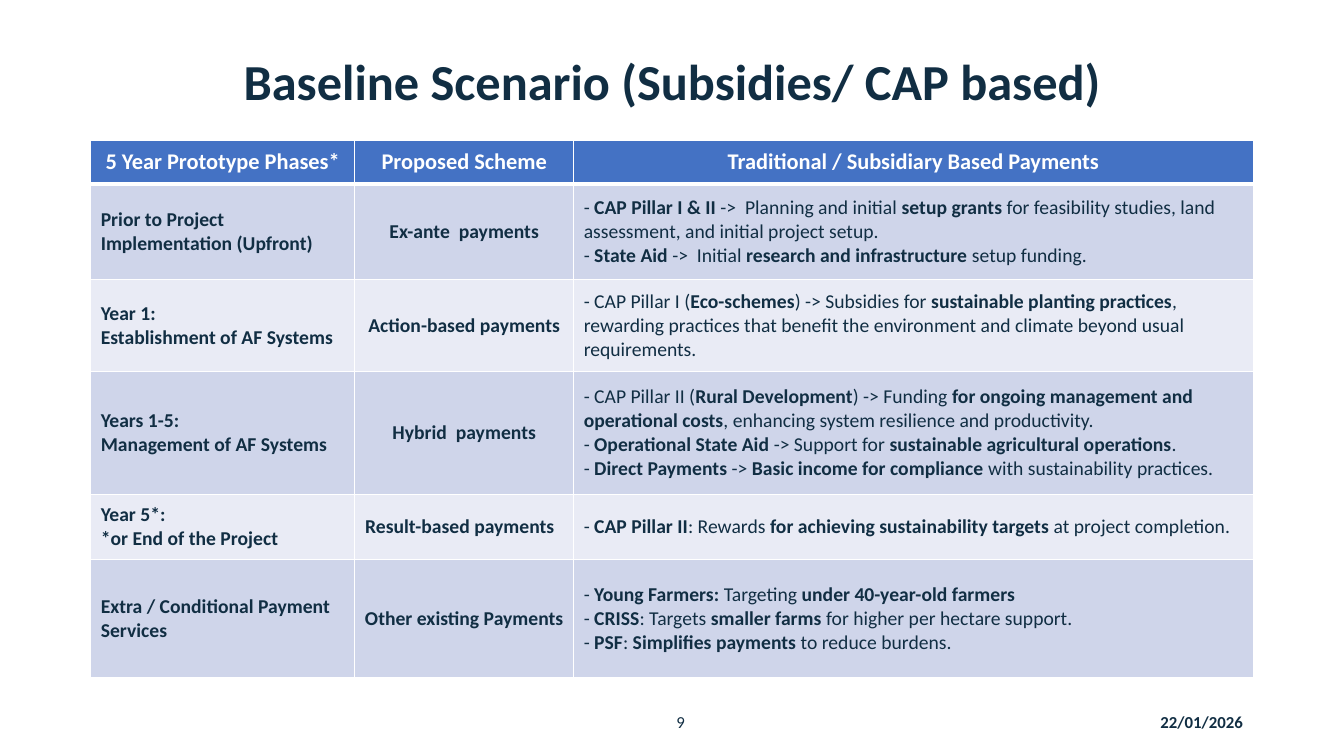
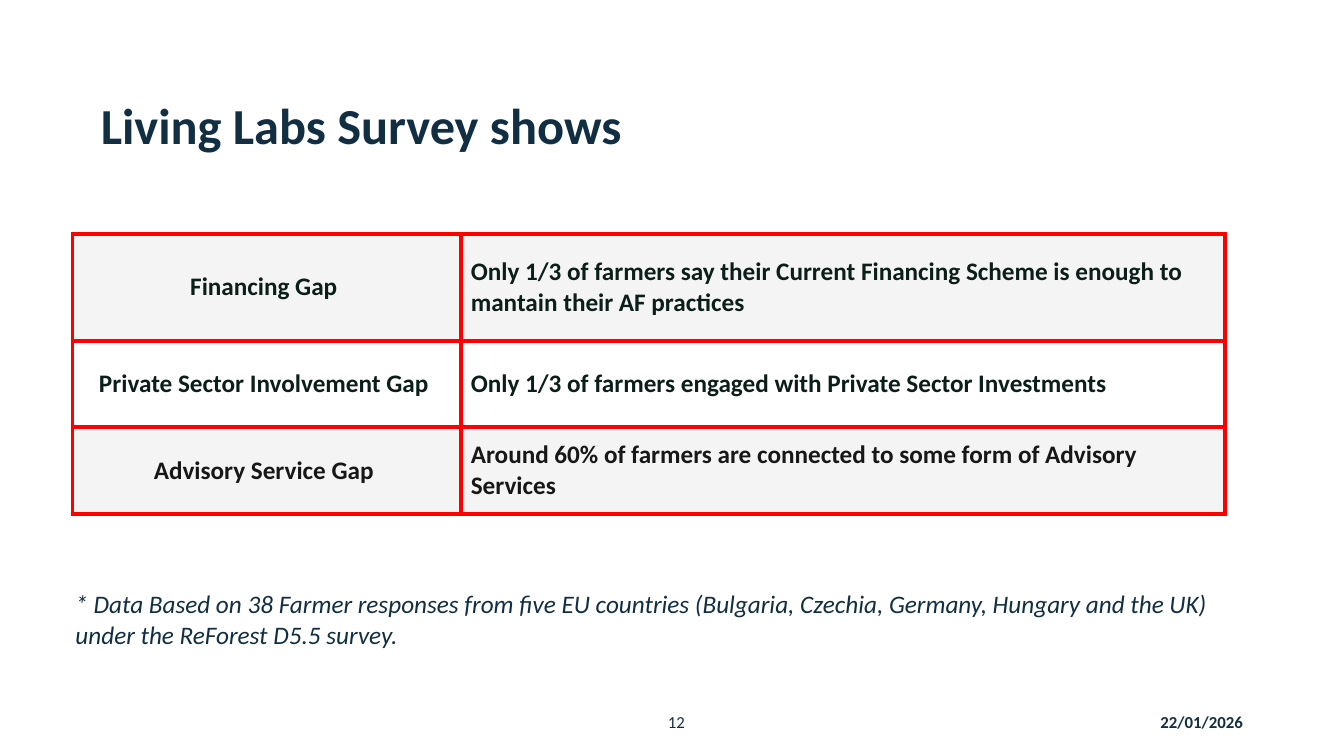
from lxml import etree
from pptx import Presentation
from pptx.dml.color import RGBColor
from pptx.enum.text import MSO_ANCHOR, PP_ALIGN
from pptx.oxml.ns import qn
from pptx.util import Inches, Pt

LEFT, CENTER, RIGHT = PP_ALIGN.LEFT, PP_ALIGN.CENTER, PP_ALIGN.RIGHT
TOP, MIDDLE, BOTTOM = MSO_ANCHOR.TOP, MSO_ANCHOR.MIDDLE, MSO_ANCHOR.BOTTOM
WIDTH, HEIGHT = Inches(13.33), Inches(7.5)
FONT = "Calibri"
TITLE_ONLY = 5
COLORS = {
    "navy": "112E43", "white": "FFFFFF", "header": "4472C4",
    "band_dark": "CFD5EA", "band_light": "E9EBF5",
    "gap_line": "FF0000", "gap_fill": "CBCCCB",
    "gap_text": "0C1E19", "advisory_text": "181717",
}

# Tables: weights of columns and rows, and text with **bold** marks
PHASE_COLUMNS = [2.62, 2.17, 6.74]
PHASE_ROWS = [0.43, 0.95, 0.91, 1.22, 0.65, 1.17]
PHASES = [
    ("5 Year Prototype Phases*", "Proposed Scheme", "Traditional / Subsidiary Based Payments"),
    ("Prior to Project Implementation (Upfront)", "Ex-ante  payments",
     "- **CAP Pillar I & II** ->  Planning and initial **setup grants** for feasibility studies, "
     "land assessment, and initial project setup.\n"
     "-** State Aid** ->  Initial **research and infrastructure **setup funding."),
    ("Year 1:\vEstablishment of AF Systems", "Action-based payments",
     "- CAP Pillar I (**Eco-schemes**) -> Subsidies for **sustainable planting practices**, "
     "rewarding practices that benefit the environment and climate beyond usual requirements."),
    ("Years 1-5:\vManagement of AF Systems", "Hybrid  payments",
     "- CAP Pillar II (**Rural Development**) -> Funding **for ongoing management and "
     "operational costs**, enhancing system resilience and productivity.\n"
     "- **Operational State Aid **-> Support for **sustainable agricultural operations**.\n"
     "-** Direct Payments** -> **Basic income for compliance **with sustainability practices."),
    ("Year 5*: \v*or End of the Project", "Result-based payments  ",
     "- **CAP Pillar II**: Rewards **for achieving sustainability targets** at project completion."),
    ("Extra / Conditional Payment Services", "Other existing Payments",
     "- **Young Farmers:** Targeting **under 40-year-old farmers**\n"
     "- **CRISS**: Targets **smaller farms **for higher per hectare support.\n"
     "- **PSF**: **Simplifies payments **to reduce burdens."),
]
GAP_COLUMNS = [3.85, 7.58]
GAP_ROWS = [1.06, 0.86, 0.86]
GAPS = [
    ("Financing Gap ", "Only 1/3 of farmers say their Current Financing Scheme is enough "
     "to mantain their AF practices"),
    ("Private Sector Involvement Gap ", "Only 1/3 of farmers engaged with Private Sector Investments"),
    ("Advisory Service Gap ", "Around 60% of farmers are connected to some form of Advisory Services"),
]


def rgb(name):
    return RGBColor.from_string(COLORS[name])


def box(left, top, width, height):
    """Turn percentages of the slide into lengths."""
    return (int(WIDTH * left / 100), int(HEIGHT * top / 100),
            int(WIDTH * width / 100), int(HEIGHT * height / 100))


def write(frame, text, size, color="navy", bold=False, italic=False, align=LEFT, spacing=None):
    """Fill a text frame, one paragraph a line."""
    frame.word_wrap = True
    for index, line in enumerate(text.split("\n")):
        paragraph = frame.paragraphs[0] if index == 0 else frame.add_paragraph()
        parts = line.split("**")
        if len(parts) == 1:
            paragraph.text = line
        else:
            for position, part in enumerate(parts):
                if part:
                    run = paragraph.add_run()
                    run.text = part
                    run.font.bold = position % 2 == 1
        paragraph.alignment = align
        if spacing:
            paragraph.line_spacing = spacing
        font = paragraph.font
        font.name, font.size = FONT, Pt(size)
        font.bold, font.italic = bold, italic
        font.color.rgb = rgb(color)


def add_text(slide, area, text, size, anchor=MIDDLE, **style):
    shape = slide.shapes.add_textbox(*area)
    shape.text_frame.vertical_anchor = anchor
    write(shape.text_frame, text, size, **style)


def add_page(presentation, title, area, number, align, anchor):
    """Title, date and page number shared by the slides."""
    slide = presentation.slides.add_slide(presentation.slide_layouts[TITLE_ONLY])
    shape = slide.shapes.title
    shape.left, shape.top, shape.width, shape.height = area
    shape.text_frame.vertical_anchor = anchor
    write(shape.text_frame, title, 36, bold=True, align=align, spacing=0.9)
    add_text(slide, box(85.6, 92.8, 12, 5.33), "22/01/2026", 12, bold=True)
    add_text(slide, box(48.39, 92.8, 3.3, 5.33), number, 12, align=RIGHT)
    return slide


def set_borders(cell, color, widths):
    """Widths in points: left, right, top, bottom."""
    properties = cell._tc.get_or_add_tcPr()
    for side, width in zip("LRTB", widths):
        line = etree.SubElement(properties, qn(f"a:ln{side}"), w=str(Pt(width)))
        fill = etree.SubElement(line, qn("a:solidFill"))
        etree.SubElement(fill, qn("a:srgbClr"), val=COLORS[color])


def set_fill(cell, color, opacity=100):
    cell.fill.solid()
    cell.fill.fore_color.rgb = rgb(color)
    if opacity < 100:
        value = cell._tc.tcPr.find(qn("a:solidFill")).find(qn("a:srgbClr"))
        etree.SubElement(value, qn("a:alpha"), val=str(opacity * 1000))


def add_grid(slide, area, columns, rows):
    """Plain table whose columns and rows share the area by weight."""
    table = slide.shapes.add_table(len(rows), len(columns), *area).table
    table.first_row = table.horz_banding = False
    for column, weight in zip(table.columns, columns):
        column.width = int(area[2] * weight / sum(columns))
    for row, weight in zip(table.rows, rows):
        row.height = int(area[3] * weight / sum(rows))
    for cell in table.iter_cells():
        cell.vertical_anchor = MIDDLE
    return table


def add_phase_table(slide, area):
    table = add_grid(slide, area, PHASE_COLUMNS, PHASE_ROWS)
    for row, texts in enumerate(PHASES):
        header = row == 0
        band = "header" if header else "band_dark" if row % 2 else "band_light"
        for column, text in enumerate(texts):
            cell = table.cell(row, column)
            set_borders(cell, "white", (1, 1, 3 if row == 1 else 1, 3 if header else 1))
            set_fill(cell, band)
            write(cell.text_frame, text, 16 if header else 14,
                  color="white" if header else "navy", bold=header or column < 2,
                  align=CENTER if header or column == 1 else LEFT)


def add_gap_table(slide, area):
    table = add_grid(slide, area, GAP_COLUMNS, GAP_ROWS)
    for row, texts in enumerate(GAPS):
        color = "advisory_text" if row == 2 else "gap_text"
        for column, text in enumerate(texts):
            cell = table.cell(row, column)
            set_borders(cell, "gap_line", (3, 3, 3, 3))
            if row % 2:
                cell.fill.background()
            else:
                set_fill(cell, "gap_fill", opacity=20)
            write(cell.text_frame, text, 18, color=color, bold=True,
                  align=LEFT if column else CENTER)


def add_baseline_slide(presentation):
    slide = add_page(presentation, "Baseline Scenario (Subsidies/ CAP based)",
                     box(7.28, 6.53, 85.52, 8.93), "9", CENTER, BOTTOM)
    add_phase_table(slide, box(6.75, 18.6, 86.5, 71.07))


def add_survey_slide(presentation):
    slide = add_page(presentation, "Living Labs Survey shows",
                     box(6.75, 12.27, 89.2, 9.47), "12", LEFT, MIDDLE)
    add_gap_table(slide, box(5.4, 30.93, 85.75, 37.07))
    add_text(slide, box(4.88, 77.2, 86.72, 9.47),
             "* Data Based on 38 Farmer responses from five EU countries (Bulgaria, Czechia, "
             "Germany, Hungary and the UK) under the ReForest D5.5 survey.",
             18, anchor=TOP, italic=True)


def main():
    presentation = Presentation()
    presentation.slide_width, presentation.slide_height = WIDTH, HEIGHT
    add_baseline_slide(presentation)
    add_survey_slide(presentation)
    presentation.save("out.pptx")


if __name__ == "__main__":
    main()
